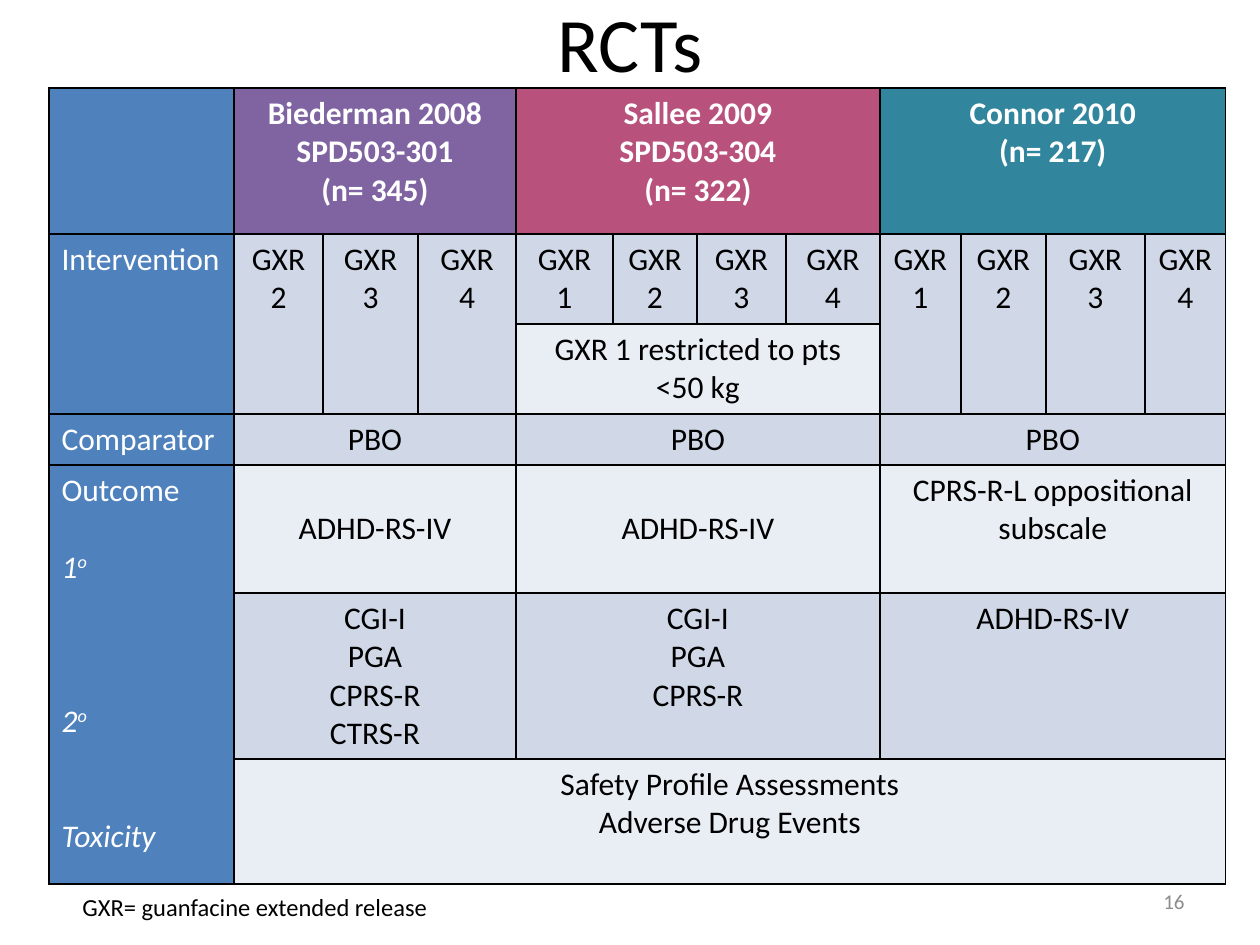
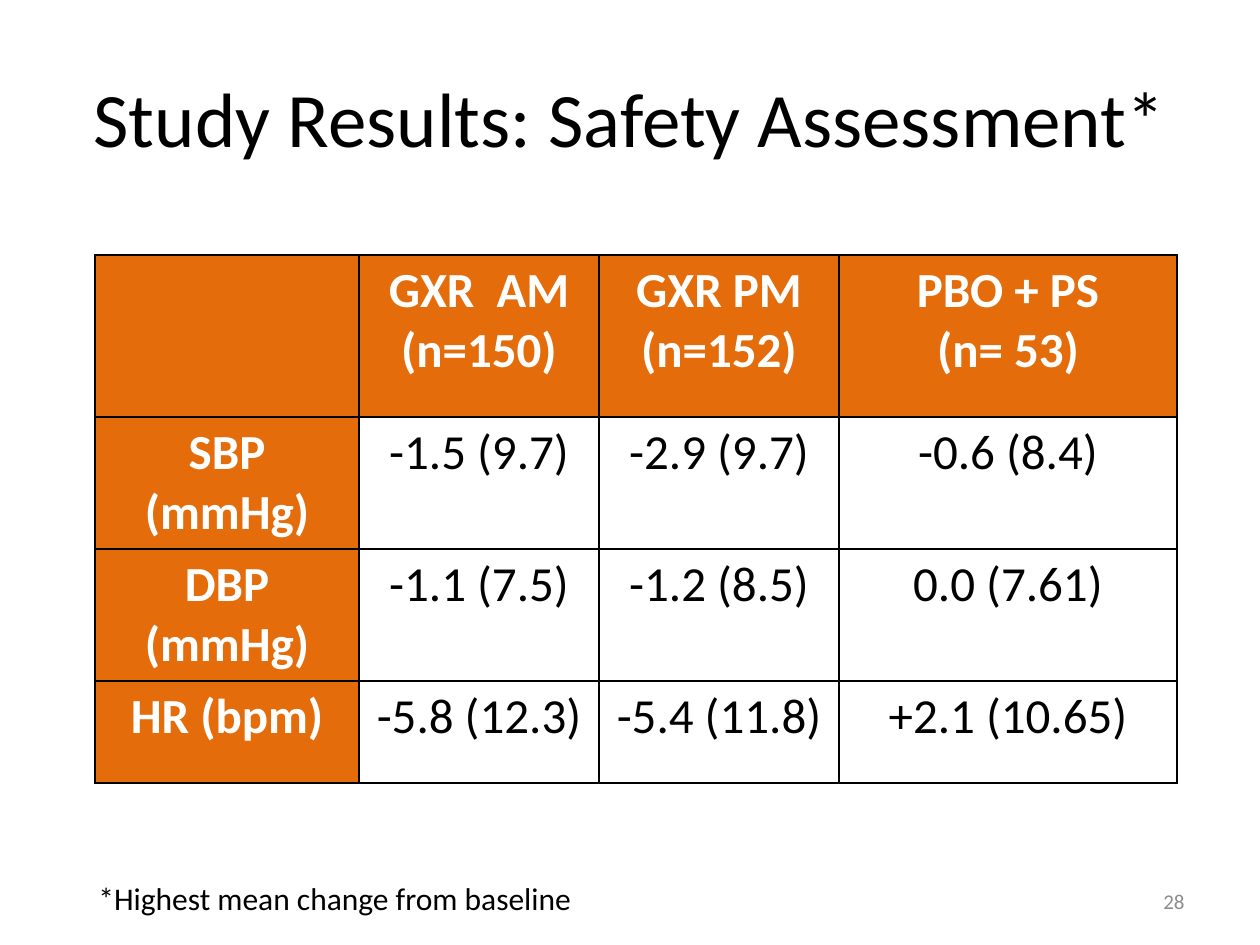
from dataclasses import dataclass

from lxml import etree
from pptx import Presentation
from pptx import util as u
from pptx.dml.color import RGBColor
from pptx.enum import text
from pptx.oxml import ns

EMU_PER_PX = 914400 / 126
LEFT, CENTER, RIGHT = text.PP_ALIGN.LEFT, text.PP_ALIGN.CENTER, text.PP_ALIGN.RIGHT
TOP, MIDDLE = text.MSO_ANCHOR.TOP, text.MSO_ANCHOR.MIDDLE


@dataclass(frozen=True)
class Theme:
    font: str = "Calibri"
    # Colours
    black: str = "000000"
    white: str = "FFFFFF"
    grey: str = "8C8C8C"
    blue: str = "4F81BD"
    purple: str = "8064A2"
    rose: str = "B8527D"
    teal: str = "31859C"
    orange: str = "E46C0A"
    band: str = "D0D8E8"
    pale_band: str = "E9EDF4"
    # Type sizes in points
    title: int = 44
    results: int = 28
    body: int = 18
    note: int = 14
    number: int = 12
    body_line: int = 22


THEME = Theme()


def px(length):
    return u.Emu(round(length * EMU_PER_PX))


def box(left, top, width, height):
    return px(left), px(top), px(width), px(height)


# Text
def style_paragraphs(frame, size, color, align, bold=False):
    for paragraph in frame.paragraphs:
        paragraph.alignment = align
        font = paragraph.font
        font.name, font.size, font.bold = THEME.font, u.Pt(size), bold
        font.color.rgb = RGBColor.from_string(color)


def add_text(slide, wording, place, size, color=THEME.black, align=LEFT, anchor=TOP):
    frame = slide.shapes.add_textbox(*box(*place)).text_frame
    frame.word_wrap = True
    frame.vertical_anchor = anchor
    frame.text = wording
    style_paragraphs(frame, size, color, align)


def add_titled_slide(presentation, title, title_top, number):
    slide = presentation.slides.add_slide(presentation.slide_layouts[5])
    shape = slide.shapes.title
    shape.left, shape.top, shape.width, shape.height = box(63, title_top, 1134, 157)
    frame = shape.text_frame
    frame.text = title
    frame.auto_size = text.MSO_AUTO_SIZE.NONE
    frame.vertical_anchor = MIDDLE
    style_paragraphs(frame, THEME.title, THEME.black, CENTER)
    add_text(slide, str(number), (903, 876, 294, 50), THEME.number,
             THEME.grey, RIGHT, MIDDLE)
    return slide


# Tables
def set_borders(cell):
    properties = cell._tc.get_or_add_tcPr()
    for index, side in enumerate(("a:lnL", "a:lnR", "a:lnT", "a:lnB")):
        line = etree.Element(ns.qn(side), w=str(u.Pt(1)))
        fill = etree.SubElement(line, ns.qn("a:solidFill"))
        etree.SubElement(fill, ns.qn("a:srgbClr"), val=THEME.black)
        properties.insert(index, line)


def add_grid(slide, left, top, columns, rows):
    place = box(left, top, sum(columns), sum(rows))
    table = slide.shapes.add_table(len(rows), len(columns), *place).table
    table.first_row = table.horz_banding = False
    for column, width in zip(table.columns, columns):
        column.width = px(width)
    for row, height in zip(table.rows, rows):
        row.height = px(height)
    for cell in table.iter_cells():
        cell.fill.background()
        set_borders(cell)
    return table


def fill_cell(table, row, column, wording, fill=None, color=THEME.black, span=(1, 1),
              size=THEME.body, align=CENTER, bold=False, anchor=TOP):
    cell = table.cell(row, column)
    if span != (1, 1):
        cell.merge(table.cell(row + span[0] - 1, column + span[1] - 1))
    if fill:
        cell.fill.solid()
        cell.fill.fore_color.rgb = RGBColor.from_string(fill)
    cell.vertical_anchor = anchor
    cell.text = wording
    style_paragraphs(cell.text_frame, size, color, align, bold)
    return cell


def add_outcome_levels(cell):
    """Italic levels below the heading, set level with the rows they name."""
    levels = (("1", "o", 1), ("2", "o", 3), ("Toxicity", "", 2))
    for wording, superscript, gap_lines in levels:
        paragraph = cell.text_frame.add_paragraph()
        paragraph.space_before = u.Pt(gap_lines * THEME.body_line)
        paragraph.add_run().text = wording
        if superscript:
            run = paragraph.add_run()
            run.text = superscript
            run._r.get_or_add_rPr().set("baseline", "30000")
    style_paragraphs(cell.text_frame, THEME.body, THEME.white, LEFT)
    for paragraph in cell.text_frame.paragraphs[1:]:
        paragraph.font.italic = True


# Slides
def build_trials(presentation):
    slide = add_titled_slide(presentation, "RCTs", -37, 16)
    table = add_grid(slide, 49, 88,
                     (185, 89, 95, 98, 97, 84, 89, 94, 81, 85, 99, 81),
                     (146, 90, 90, 51, 128, 166, 125))

    # Row headings
    headings = (("", 0, 1), ("Intervention", 1, 2), ("Comparator", 3, 1), ("Outcome", 4, 3))
    for heading, row, height in headings:
        cell = fill_cell(table, row, 0, heading, THEME.blue, THEME.white,
                         (height, 1), align=LEFT)
    add_outcome_levels(cell)

    # One block of columns per trial: heading, colour, doses, dose rows, outcomes
    trials = (
        ("Biederman 2008\nSPD503-301\n(n= 345)", THEME.purple, (2, 3, 4), 2,
         "ADHD-RS-IV", MIDDLE, "CGI-I\nPGA\nCPRS-R\nCTRS-R"),
        ("Sallee 2009\nSPD503-304\n(n= 322)", THEME.rose, (1, 2, 3, 4), 1,
         "ADHD-RS-IV", MIDDLE, "CGI-I\nPGA\nCPRS-R"),
        ("Connor 2010\n(n= 217)", THEME.teal, (1, 2, 3, 4), 2,
         "CPRS-R-L oppositional subscale", TOP, "ADHD-RS-IV"),
    )
    start = 1
    for heading, color, doses, dose_rows, primary, anchor, secondary in trials:
        span = (1, len(doses))
        fill_cell(table, 0, start, heading, color, THEME.white, span, bold=True)
        for column, dose in enumerate(doses, start):
            fill_cell(table, 1, column, f"GXR {dose}", THEME.band, span=(dose_rows, 1))
        if dose_rows == 1:
            fill_cell(table, 2, start, "GXR 1 restricted to pts <50 kg",
                      THEME.pale_band, span=span)
        fill_cell(table, 3, start, "PBO", THEME.band, span=span)
        fill_cell(table, 4, start, primary, THEME.pale_band, span=span, anchor=anchor)
        fill_cell(table, 5, start, secondary, THEME.band, span=span)
        start += len(doses)
    fill_cell(table, 6, 1, "Safety Profile Assessments\nAdverse Drug Events",
              THEME.pale_band, span=(1, start - 1))

    add_text(slide, "GXR= guanfacine extended release", (70, 886, 376, 43), THEME.note)


def build_safety(presentation):
    slide = add_titled_slide(presentation, "Study Results: Safety Assessment*", 38, 28)
    table = add_grid(slide, 95, 255, (264, 240, 240, 338), (162, 132, 132, 102))
    results = (
        ("", "GXR  AM\n(n=150)", "GXR PM\n(n=152)", "PBO + PS\n(n= 53)"),
        ("SBP (mmHg)", "-1.5 (9.7)", "-2.9 (9.7)", "-0.6 (8.4)"),
        ("DBP (mmHg)", "-1.1 (7.5)", "-1.2 (8.5)", "0.0 (7.61)"),
        ("HR (bpm)", "-5.8 (12.3)", "-5.4 (11.8)", "+2.1 (10.65)"),
    )
    for row, values in enumerate(results):
        for column, value in enumerate(values):
            is_heading = row == 0 or column == 0
            fill_cell(table, row, column, value,
                      THEME.orange if is_heading else None,
                      THEME.white if is_heading else THEME.black,
                      size=THEME.results, bold=is_heading)
    add_text(slide, "*Highest mean change from baseline", (86, 873, 1111, 50), THEME.body)


def main():
    presentation = Presentation()
    presentation.slide_width, presentation.slide_height = px(1260), px(945)
    build_trials(presentation)
    build_safety(presentation)
    presentation.save("out.pptx")


if __name__ == "__main__":
    main()
